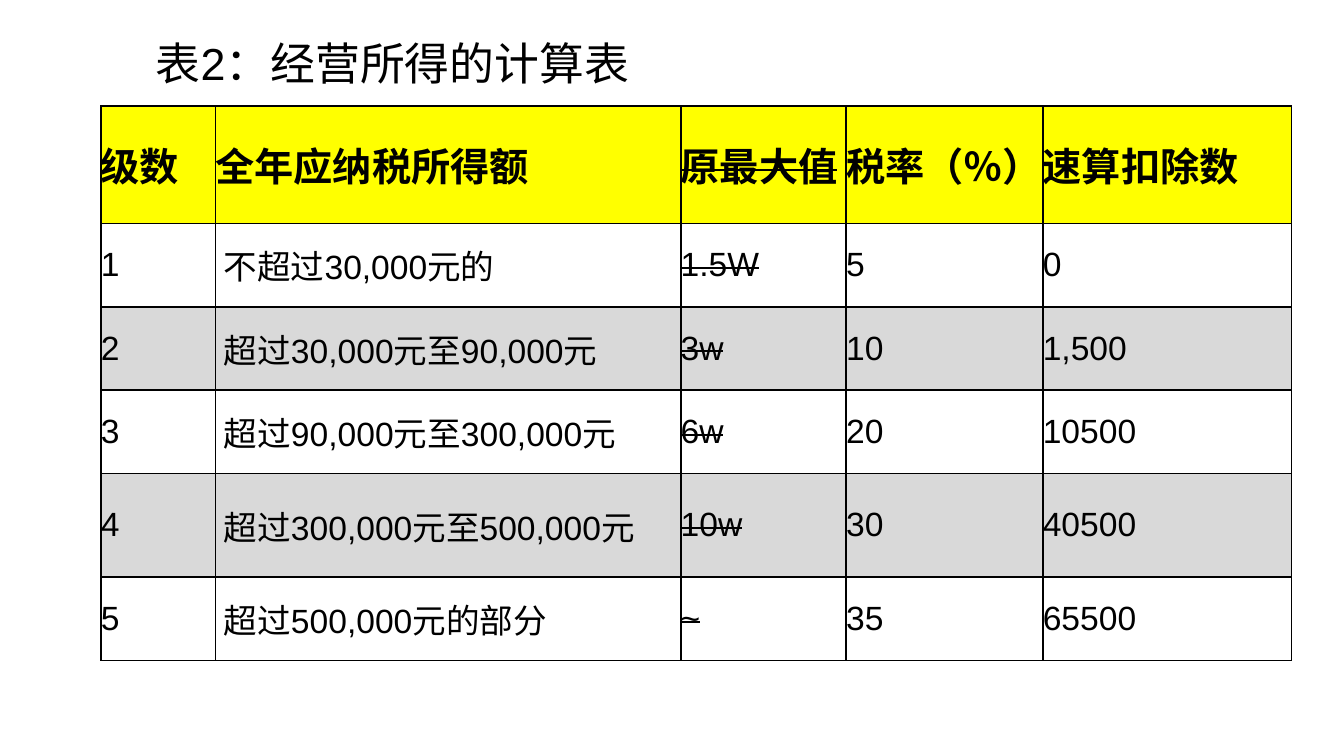
from lxml import etree
from pptx import Presentation
from pptx.dml.color import RGBColor
from pptx.enum import text as t
from pptx.oxml import ns
from pptx.util import Pt

# Content
TITLE = "表2：经营所得的计算表"
ROWS = [
    ("级数", "全年应纳税所得额", "原最大值", "税率（％）", "速算扣除数"),
    ("1", "不超过30,000元的", "1.5W", "5", "0"),
    ("2", "超过30,000元至90,000元", "3w", "10", "1,500"),
    ("3", "超过90,000元至300,000元", "6w", "20", "10500"),
    ("4", "超过300,000元至500,000元", "10w", "30", "40500"),
    ("5", "超过500,000元的部分", "~", "35", "65500"),
]
WIDTHS = [61.4, 249.3, 88.6, 105.4, 133.2]
HEIGHTS = [63, 44.7, 44.7, 44.7, 55.5, 44.7]
RANGE, OLD = 1, 2  # columns: indented text, struck-out text
COLORS = {"ink": "000000", "head": "FFFF00", "odd": "FFFFFF", "even": "D9D9D9"}


def rgb(name):
    return RGBColor.from_string(COLORS[name])


def write(frame, words, size=18, bold=False, strike=False):
    para = frame.paragraphs[0]
    para.alignment = t.PP_ALIGN.LEFT
    run = para.add_run()
    run.text = words
    font = run.font
    font.name, font.size, font.bold = "Arial", Pt(size), bold
    font.color.rgb = rgb("ink")
    if strike:
        run._r.get_or_add_rPr().set("strike", "sngStrike")


def border(cell):
    props = cell._tc.get_or_add_tcPr()
    for side in ("lnL", "lnR", "lnT", "lnB"):
        line = etree.SubElement(props, ns.qn(f"a:{side}"), w=str(Pt(1)))
        fill = etree.SubElement(line, ns.qn("a:solidFill"))
        etree.SubElement(fill, ns.qn("a:srgbClr"), val=COLORS["ink"])


deck = Presentation()
deck.slide_width, deck.slide_height = Pt(720), Pt(405)
slide = deck.slides.add_slide(deck.slide_layouts[5])

# Title
title = slide.shapes.title
title.left, title.top, title.width, title.height = Pt(76.3), Pt(10), Pt(568), Pt(46.8)
title.text_frame.vertical_anchor = t.MSO_ANCHOR.MIDDLE
write(title.text_frame, TITLE, size=24)

# Tax table
table = slide.shapes.add_table(
    len(ROWS), len(WIDTHS), Pt(54), Pt(56.7), Pt(sum(WIDTHS)), Pt(sum(HEIGHTS))
).table
for col, width in zip(table.columns, WIDTHS):
    col.width = Pt(width)
for row, height in zip(table.rows, HEIGHTS):
    row.height = Pt(height)

for r, row in enumerate(ROWS):
    head = r == 0
    shade = "head" if head else "odd" if r % 2 else "even"
    for c, words in enumerate(row):
        cell = table.cell(r, c)
        cell.margin_top = cell.margin_right = cell.margin_bottom = 0
        cell.margin_left = Pt(4.5) if c == RANGE and not head else 0
        cell.vertical_anchor = t.MSO_ANCHOR.MIDDLE
        border(cell)
        cell.fill.solid()
        cell.fill.fore_color.rgb = rgb(shade)
        write(cell.text_frame, words, size=21 if head else 18, bold=head, strike=c == OLD)

deck.save("out.pptx")
